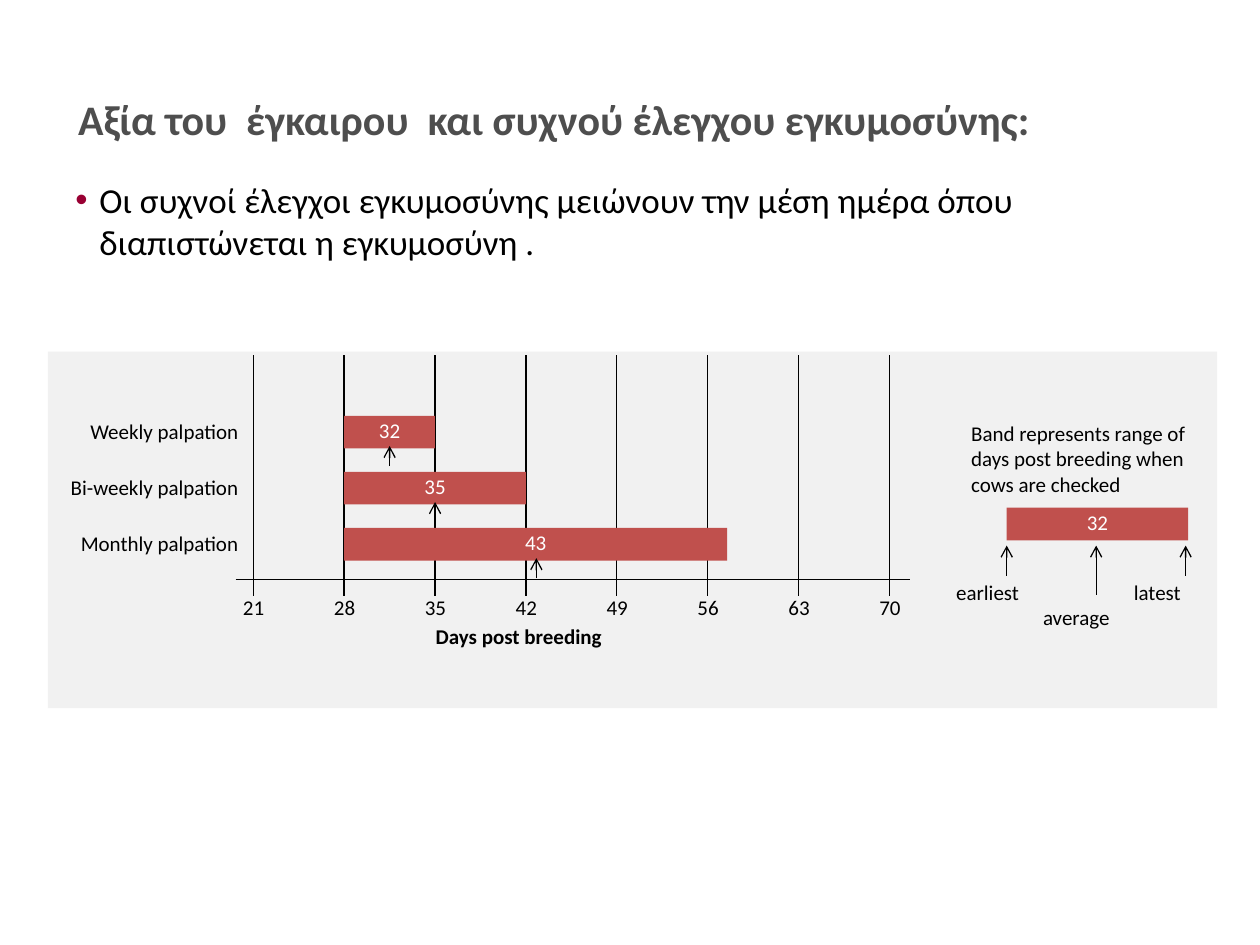
from lxml import etree
from pptx import Presentation
from pptx.dml.color import RGBColor
from pptx.enum import shapes, text
from pptx.oxml import ns
from pptx.util import Inches, Pt

COLORS = {"ink": "000000", "title": "4E4E4E", "bar": "C0504D",
          "panel": "C0C0C0", "bullet": "990033", "light": "FFFFFF"}
LEFT, RIGHT, CENTER = text.PP_ALIGN.LEFT, text.PP_ALIGN.RIGHT, text.PP_ALIGN.CENTER
TOP, MIDDLE = text.MSO_ANCHOR.TOP, text.MSO_ANCHOR.MIDDLE

# Time axis: day 21 sits at 2.01 in, one week every 0.72 in
DAYS = range(21, 71, 7)
ROWS = [  # label, first day, last day, average, arrow day
    ("Weekly palpation", 28, 35, "32", 31.5),
    ("Bi-weekly palpation", 28, 42, "35", 35),
    ("Monthly palpation", 28, 57.5, "43", 42.8),
]


def day_x(day):
    return 2.01 + (day - 21) * 5.05 / 49


def rgb(name):
    return RGBColor.from_string(COLORS[name])


def sub(parent, tag, **attrs):
    return etree.SubElement(parent, ns.qn(tag), **attrs)


def write(frame, words, size=12, color="ink", bold=False, align=LEFT, anchor=TOP):
    frame.word_wrap = True
    frame.vertical_anchor = anchor
    frame.text = words
    para = frame.paragraphs[0]
    para.alignment = align
    for run in para.runs:
        font = run.font
        font.name, font.size, font.bold = "Calibri", Pt(size), bold
        font.color.rgb = rgb(color)
    return para


def add_text(slide, words, x, y, w, h=0.3, wrap=True, **style):
    box = slide.shapes.add_textbox(Inches(x), Inches(y), Inches(w), Inches(h))
    para = write(box.text_frame, words, **style)
    box.text_frame.word_wrap = wrap
    return para


def add_rect(slide, x, y, w, h, color):
    rect = slide.shapes.add_shape(shapes.MSO_SHAPE.RECTANGLE,
                                  Inches(x), Inches(y), Inches(w), Inches(h))
    rect.shadow.inherit = False
    rect.fill.solid()
    rect.fill.fore_color.rgb = rgb(color)
    rect.line.fill.background()
    return rect


def add_bar(slide, x, y, w, value):
    bar = add_rect(slide, x, y, w, 0.26, "bar")
    para = write(bar.text_frame, value, color="light", align=CENTER, anchor=MIDDLE)
    para.line_spacing = 0.8


def add_line(slide, x1, y1, x2, y2, arrow=False):
    line = slide.shapes.add_connector(shapes.MSO_CONNECTOR.STRAIGHT,
                                      Inches(x1), Inches(y1), Inches(x2), Inches(y2))
    line.line.color.rgb = rgb("ink")
    line.line.width = Pt(0.75)
    if arrow:
        sub(line.line._get_or_add_ln(), "a:tailEnd", type="arrow")
    sub(line._element.spPr, "a:effectLst")


def add_title(slide, words):
    title = slide.shapes.title
    title.left, title.top = Inches(0.52), Inches(0.73)
    title.width, title.height = Inches(9.42), Inches(0.43)
    write(title.text_frame, words, 24, "title", True, anchor=MIDDLE)


def add_bullet(slide, words):
    para = add_text(slide, words, 0.5, 1.37, 8.8, 0.84, size=20)
    props = para._p.get_or_add_pPr()
    props.set("marL", str(Inches(0.19)))
    props.set("indent", str(-Inches(0.19)))
    sub(sub(props, "a:buClr"), "a:srgbClr", val=COLORS["bullet"])
    sub(props, "a:buFont", typeface="Arial")
    sub(props, "a:buChar", char="•")


def add_panel(slide):
    panel = add_rect(slide, 0.38, 2.79, 9.28, 2.83, "panel")
    tint = panel._element.spPr.find(".//" + ns.qn("a:srgbClr"))
    sub(tint, "a:alpha", val="22000")


def add_axis(slide):
    add_line(slide, 1.87, 4.6, 7.22, 4.6)
    for day in DAYS:
        x = day_x(day)
        add_line(slide, x, 2.82, x, 4.73)
        add_text(slide, str(day), x - 0.18, 4.67, 0.39, wrap=False)
    add_text(slide, "Days post breeding", 3.36, 4.9, 1.75, wrap=False, bold=True)


def add_rows(slide):
    for i, (label, first, last, value, mark) in enumerate(ROWS):
        y = 3.3 + i * 0.445
        x = day_x(first)
        add_text(slide, label, 0.35, y - 0.03, 1.64, align=RIGHT)
        add_bar(slide, x, y, day_x(last) - x, value)
    # Average markers go above all bars
    for i, row in enumerate(ROWS):
        x, y = day_x(row[-1]), 3.54 + i * 0.445
        add_line(slide, x, y + 0.16, x, y, arrow=True)


def add_key(slide):
    add_text(slide, "Band represents range of days post breeding when cows are checked",
             7.61, 3.29, 2.22, 0.7)
    add_bar(slide, 7.99, 4.03, 1.44, "32")
    marks = [("earliest", 7.49, 4.55, 7.99, 4.57),
             ("average", 8.18, 4.75, 8.7, 4.72),
             ("latest", 8.9, 4.55, 9.41, 4.57)]
    for label, left, top, x, foot in marks:
        add_text(slide, label, left, top, 1.01)
        add_line(slide, x, foot, x, 4.33, arrow=True)


def main():
    deck = Presentation()
    deck.slide_width, deck.slide_height = Inches(10), Inches(7.5)
    slide = deck.slides.add_slide(deck.slide_layouts[5])
    add_title(slide, "Αξία του  έγκαιρου  και συχνού έλεγχου εγκυμοσύνης:")
    add_bullet(slide, "Οι συχνοί έλεγχοι εγκυμοσύνης μειώνουν την μέση ημέρα "
                      "όπου διαπιστώνεται η εγκυμοσύνη .")
    add_panel(slide)
    add_axis(slide)
    add_rows(slide)
    add_key(slide)
    deck.save("out.pptx")


if __name__ == "__main__":
    main()
